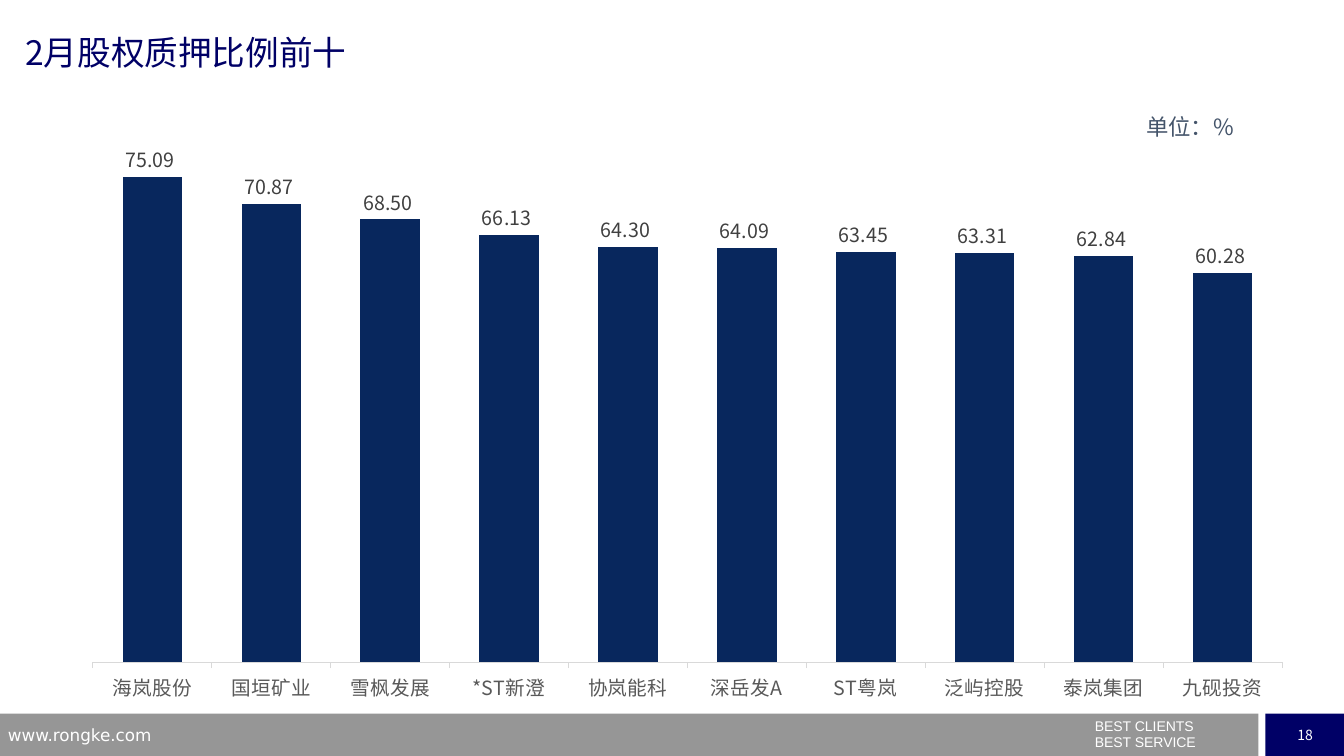
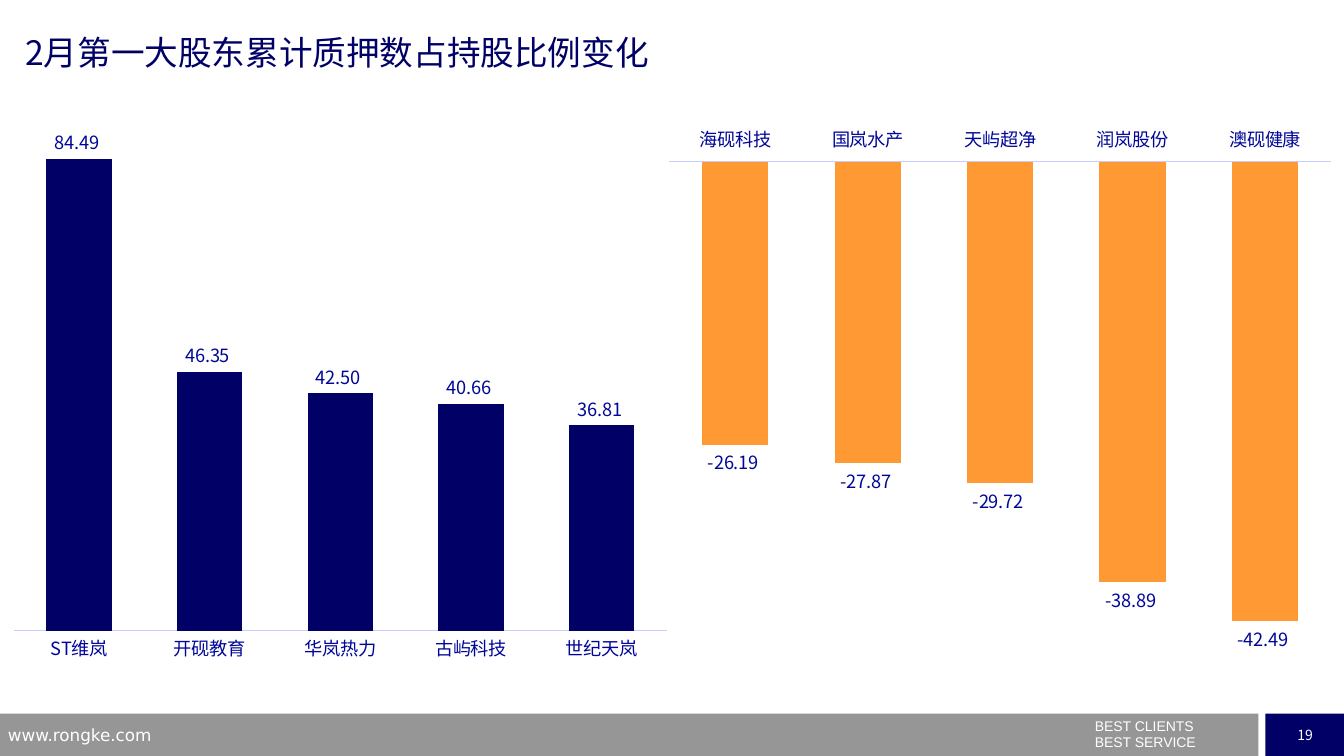
import dataclasses

import pptx
import pptx.chart.data
import pptx.dml.color
import pptx.enum.chart
import pptx.enum.shapes
import pptx.enum.text
import pptx.oxml
import pptx.oxml.ns
import pptx.util

SCALE = 9144  # EMU in one px, 100 px to the inch
WIDE, HIGH = 1333, 750
BAR_TOP, BAR_HIGH = 708, 42


@dataclasses.dataclass(frozen=True)
class Theme:
    navy: str = "000066"
    deep: str = "08275D"
    orange: str = "FF9933"
    gray: str = "969696"
    white: str = "FFFFFF"
    slate: str = "44546A"
    ink: str = "404040"
    soft: str = "595959"
    rule: str = "D9D9D9"
    blue: str = "000798"
    pale: str = "C9CCFF"
    font: str = "Noto Sans CJK SC"
    latin: str = "Arial"
    web: str = "DejaVu Sans"
    title: int = 24
    unit: int = 16
    large: int = 14
    label: int = 13
    site: int = 12
    small: int = 10


THEME = Theme()


@dataclasses.dataclass(frozen=True)
class Look:
    """Colours, type size and number format of one kind of chart."""
    size: int
    names: str
    values: str
    line: str
    digits: str
    overlap: int
    tick: object


AXIS = pptx.enum.chart.XL_TICK_MARK
RANKING = Look(THEME.large, THEME.soft, THEME.ink, THEME.rule,
               "0.00_ ", -27, AXIS.OUTSIDE)
CHANGE = Look(THEME.label, THEME.blue, THEME.blue, THEME.pale,
              "#,##0.00_ ", -24, AXIS.NONE)


def px(*sizes):
    return [pptx.util.Emu(size * SCALE) for size in sizes]


def rgb(code):
    return pptx.dml.color.RGBColor.from_string(code)


def style(font, size, color, name=THEME.font):
    font.size = pptx.util.Pt(size)
    font.color.rgb = rgb(color)
    font.name = name


def match(root):
    """Give East Asian letters the same font as Latin ones."""
    tag = pptx.oxml.ns.qn("a:ea")
    for latin in list(root.iter(pptx.oxml.ns.qn("a:latin"))):
        east = latin.makeelement(tag, {"typeface": latin.get("typeface")})
        latin.addnext(east)


def write(shape, text, size, color, name=THEME.font, inset=True, wrap=True,
          align=None, anchor=None, leading=None, before=0):
    frame = shape.text_frame
    frame.word_wrap = wrap
    if not inset:
        frame.margin_left = frame.margin_right = 0
        frame.margin_top = frame.margin_bottom = 0
    if anchor is not None:
        frame.vertical_anchor = anchor
    for index, line in enumerate(text.split("\n")):
        para = frame.add_paragraph() if index else frame.paragraphs[0]
        para.alignment = align
        para.line_spacing = leading
        if index and before:
            para.space_before = pptx.util.Pt(before)
        run = para.add_run()
        run.text = line
        style(run.font, size, color, name)
    match(shape.element)


def label(slide, box, text, size, color, **format):
    write(slide.shapes.add_textbox(*px(*box)), text, size, color, **format)


def band(slide, left, width, color):
    kind = pptx.enum.shapes.MSO_SHAPE.RECTANGLE
    shape = slide.shapes.add_shape(kind, *px(left, BAR_TOP, width, BAR_HIGH))
    shape.shadow.inherit = False
    shape.fill.solid()
    shape.fill.fore_color.rgb = rgb(color)
    shape.line.fill.background()
    return shape


def page(deck, number, title):
    """Add a slide with its title and footer."""
    slide = deck.slides.add_slide(deck.slide_layouts[6])
    band(slide, 0, 1248, THEME.gray)
    write(band(slide, 1255, 79, THEME.navy), str(number), THEME.small,
          THEME.white, wrap=False, align=pptx.enum.text.PP_ALIGN.CENTER,
          anchor=pptx.enum.text.MSO_ANCHOR.MIDDLE)
    label(slide, (1076, 714, 256, 36), "BEST CLIENTS\nBEST SERVICE",
          THEME.small, THEME.white, name=THEME.latin, leading=0.5, before=5.75)
    label(slide, (-2, 714, 322, 26), "www.rongke.com",
          THEME.site, THEME.white, name=THEME.web)
    label(slide, (25, 32, 900, 42), title, THEME.title, THEME.navy,
          inset=False)
    return slide


def place(chart, sizes):
    """Fix the inner plot area, as parts of the chart's size."""
    plot = chart.element.find(".//" + pptx.oxml.ns.qn("c:plotArea"))
    old = plot.find(pptx.oxml.ns.qn("c:layout"))
    if old is not None:
        plot.remove(old)
    parts = '<c:layoutTarget val="inner"/>'
    parts += "".join(f'<c:{key}Mode val="edge"/>' for key in "xy")
    parts += "".join(f'<c:{key} val="{size}"/>'
                     for key, size in zip("xywh", sizes))
    space = pptx.oxml.ns.nsdecls("c")
    plot.insert(0, pptx.oxml.parse_xml(
        f"<c:layout {space}><c:manualLayout>{parts}</c:manualLayout>"
        "</c:layout>"))


def columns(slide, box, pairs, color, look, low=0, top=0, plot=None):
    data = pptx.chart.data.CategoryChartData(number_format=look.digits)
    data.categories = list(pairs)
    data.add_series("Series 1", list(pairs.values()))
    kind = pptx.enum.chart.XL_CHART_TYPE.COLUMN_CLUSTERED
    chart = slide.shapes.add_chart(kind, *px(*box), data).chart
    chart.has_legend = chart.has_title = False
    style(chart.font, look.size, look.names)

    names = chart.category_axis
    names.major_tick_mark = look.tick
    names.minor_tick_mark = AXIS.NONE
    names.has_major_gridlines = False
    names.format.line.color.rgb = rgb(look.line)
    names.format.line.width = pptx.util.Pt(0.75)
    style(names.tick_labels.font, look.size, look.names)
    if low < 0:
        names.tick_label_position = pptx.enum.chart.XL_TICK_LABEL_POSITION.HIGH

    values = chart.value_axis
    values.visible = values.has_major_gridlines = False
    values.minimum_scale, values.maximum_scale = low, top

    bars = chart.plots[0]
    bars.gap_width, bars.overlap = 100, look.overlap
    bars.vary_by_categories = False
    series = bars.series[0]
    series.invert_if_negative = False
    series.format.fill.solid()
    series.format.fill.fore_color.rgb = rgb(color)
    marks = series.data_labels
    marks.show_value = True
    marks.position = pptx.enum.chart.XL_LABEL_POSITION.OUTSIDE_END
    marks.number_format = look.digits
    marks.number_format_is_linked = False
    style(marks.font, look.size, look.values)
    if plot:
        place(chart, plot)
    match(chart.element)


def ratios(deck):
    slide = page(deck, 18, "2月股权质押比例前十")
    label(slide, (1137, 112, 104, 27), "单位：%", THEME.unit, THEME.slate,
          inset=False)
    pairs = {"海岚股份": 75.09, "国垣矿业": 70.87, "雪枫发展": 68.5,
             "*ST新澄": 66.13, "协岚能科": 64.3, "深岳发A": 64.09,
             "ST粤岚": 63.45, "泛屿控股": 63.31, "泰岚集团": 62.84,
             "九砚投资": 60.28}
    columns(slide, (9, 106, 1278, 595), pairs, THEME.deep, RANKING, top=80,
            plot=(0.065, 0.064, 0.923, 0.862))


def changes(deck):
    slide = page(deck, 19, "2月第一大股东累计质押数占持股比例变化")
    rises = {"ST维岚": 84.49, "开砚教育": 46.35, "华岚热力": 42.5,
             "古屿科技": 40.66, "世纪天岚": 36.81}
    falls = {"海砚科技": -26.19, "国岚水产": -27.87, "天屿超净": -29.72,
             "润岚股份": -38.89, "澳砚健康": -42.49}
    columns(slide, (0, 116, 675, 551), rises, THEME.navy, CHANGE, top=90)
    columns(slide, (650, 114, 684, 540), falls, THEME.orange, CHANGE, low=-45)


def main():
    deck = pptx.Presentation()
    deck.slide_width, deck.slide_height = px(WIDE, HIGH)
    ratios(deck)
    changes(deck)
    deck.save("out.pptx")


if __name__ == "__main__":
    main()
